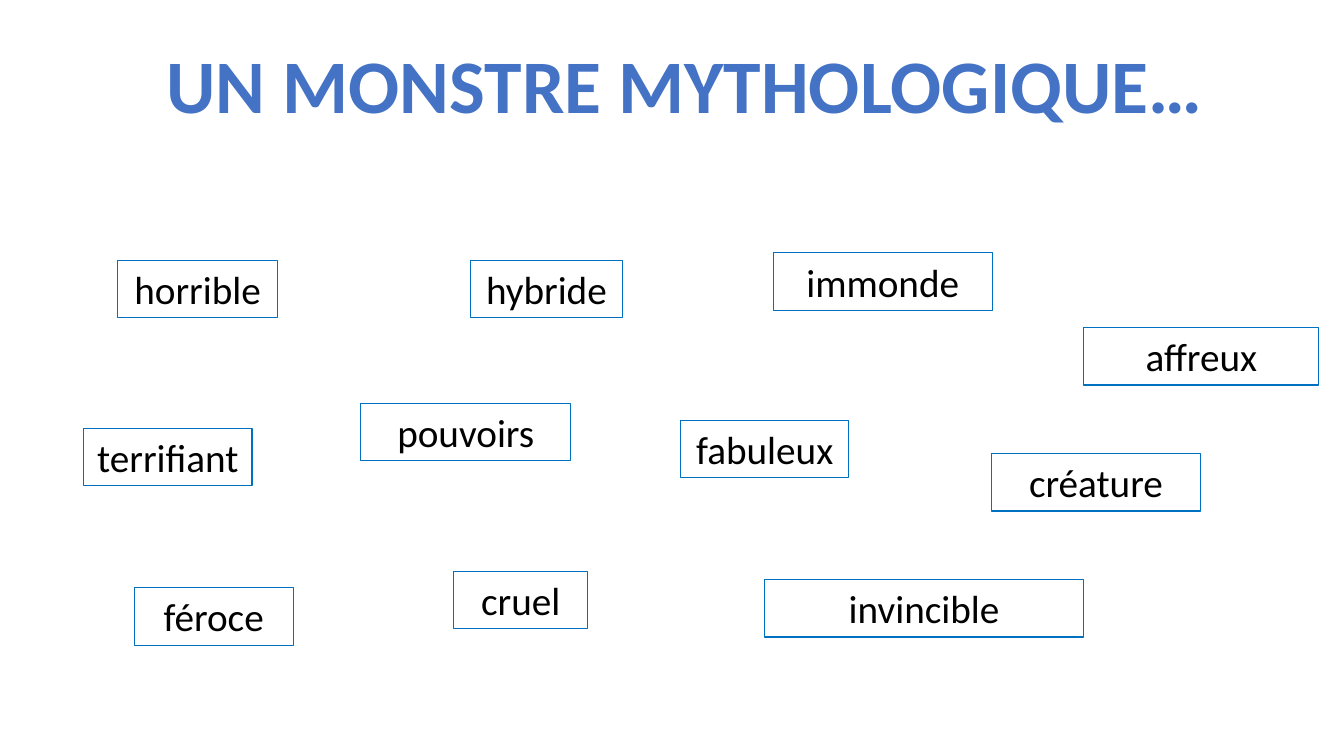
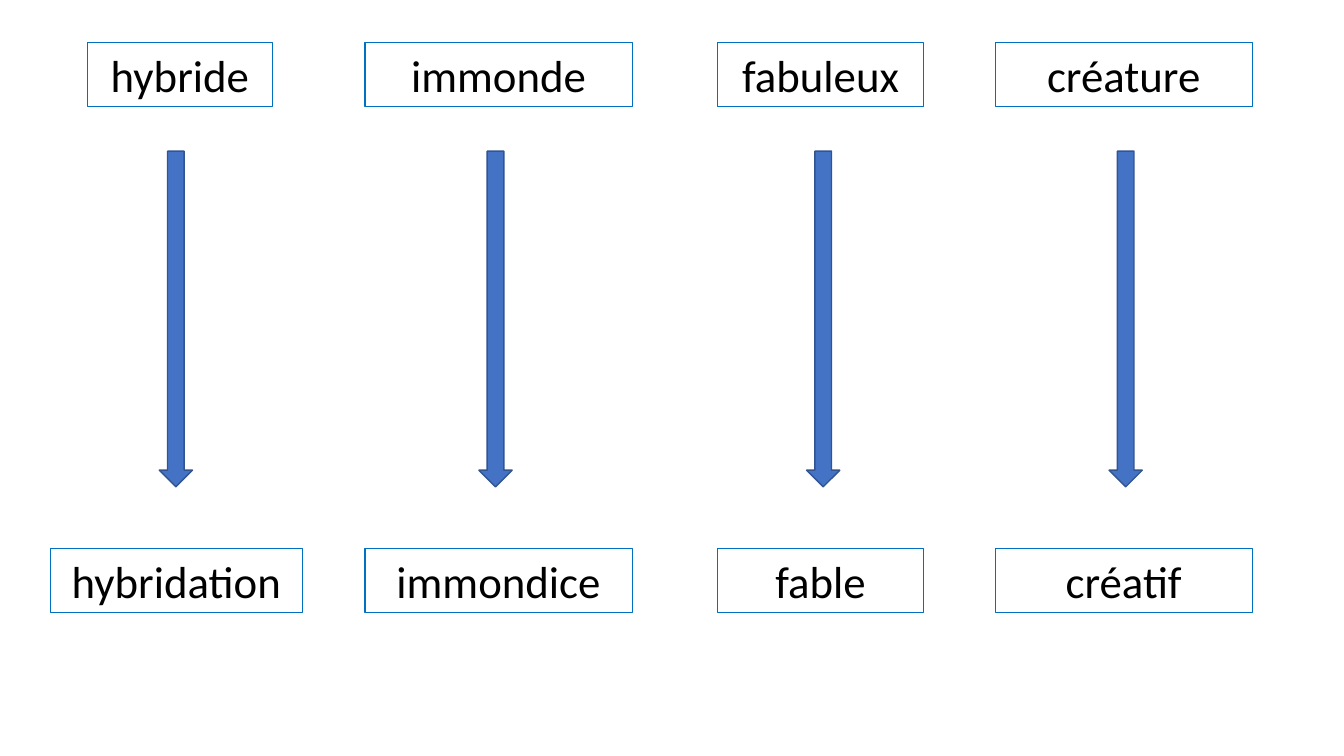
from pptx import Presentation
from pptx.dml.color import RGBColor
from pptx.enum.shapes import MSO_SHAPE
from pptx.enum.text import MSO_AUTO_SIZE, PP_ALIGN
from pptx.util import Inches, Pt

DOWN_ARROW = MSO_SHAPE.DOWN_ARROW
GROW = MSO_AUTO_SIZE.SHAPE_TO_FIT_TEXT
CENTER = PP_ALIGN.CENTER
BLANK_LAYOUT = 6

FONT = "Calibri"
COLORS = {
    "accent": "4472C4",
    "arrow_line": "325491",
    "frame": "0070C0",
    "text": "000000",
}

TITLE = "UN MONSTRE MYTHOLOGIQUE…"
# word, left, top, width
SCATTERED_WORDS = [
    ("horrible", 1.17, 2.58, 1.58),
    ("hybride", 4.67, 2.58, 1.5),
    ("immonde", 7.67, 2.51, 2.17),
    ("affreux", 10.75, 3.25, 2.33),
    ("terrifiant", 0.83, 4.25, 1.67),
    ("pouvoirs", 3.58, 4, 2.08),
    ("fabuleux", 6.75, 4.17, 1.67),
    ("créature", 9.83, 4.5, 2.08),
    ("féroce", 1.33, 5.83, 1.58),
    ("cruel", 4.5, 5.67, 1.33),
    ("invincible", 7.58, 5.75, 3.17),
]
# (word, left, width), arrow left, (derived word, left, width)
WORD_FAMILIES = [
    (("hybride", 0.87, 1.83), 1.58, ("hybridation", 0.5, 2.5)),
    (("immonde", 3.62, 2.65), 4.75, ("immondice", 3.62, 2.65)),
    (("fabuleux", 7.12, 2.04), 8, ("fable", 7.12, 2.04)),
    (("créature", 9.87, 2.55), 11, ("créatif", 9.87, 2.55)),
]


def color(name):
    return RGBColor.from_string(COLORS[name])


def set_line(shape, name, width):
    shape.line.color.rgb = color(name)
    shape.line.width = Pt(width)


def add_text(page, text, left, top, width, height, size, name="text", bold=False):
    box = page.shapes.add_textbox(
        Inches(left), Inches(top), Inches(width), Inches(height))
    frame = box.text_frame
    frame.word_wrap = True
    frame.auto_size = GROW
    frame.text = text
    para = frame.paragraphs[0]
    para.alignment = CENTER
    font = para.runs[0].font
    font.name = FONT
    font.size = Pt(size)
    font.bold = bold
    font.color.rgb = color(name)
    return box


def add_word(page, word, left, top, width, height, size):
    box = add_text(page, word, left, top, width, height, size)
    set_line(box, "frame", 0.75)


def add_arrow(page, left, top, width=0.33, height=3.33):
    arrow = page.shapes.add_shape(
        DOWN_ARROW, Inches(left), Inches(top), Inches(width), Inches(height))
    arrow.shadow.inherit = False
    arrow.fill.solid()
    arrow.fill.fore_color.rgb = color("accent")
    set_line(arrow, "arrow_line", 1)


def add_word_family(page, source, arrow_left, derived, top=0.42):
    """Place a word, an arrow below it and the word derived from it."""
    for (word, left, width), offset in ((source, 0), (derived, 5.02)):
        add_word(page, word, left, top + offset, width, 0.64, 32)
    add_arrow(page, arrow_left, top + 1.08)


def add_page(deck):
    return deck.slides.add_slide(deck.slide_layouts[BLANK_LAYOUT])


def build_vocabulary_page(deck):
    page = add_page(deck)
    add_text(page, TITLE, 1.25, 0.33, 11.08, 1.01, 54, "accent", bold=True)
    for word, left, top, width in SCATTERED_WORDS:
        add_word(page, word, left, top, width, 0.57, 28)


def build_families_page(deck):
    page = add_page(deck)
    for source, arrow_left, derived in WORD_FAMILIES:
        add_word_family(page, source, arrow_left, derived)


def main():
    deck = Presentation()
    deck.slide_width = Inches(13.33)
    deck.slide_height = Inches(7.5)
    build_vocabulary_page(deck)
    build_families_page(deck)
    deck.save("out.pptx")


if __name__ == "__main__":
    main()
